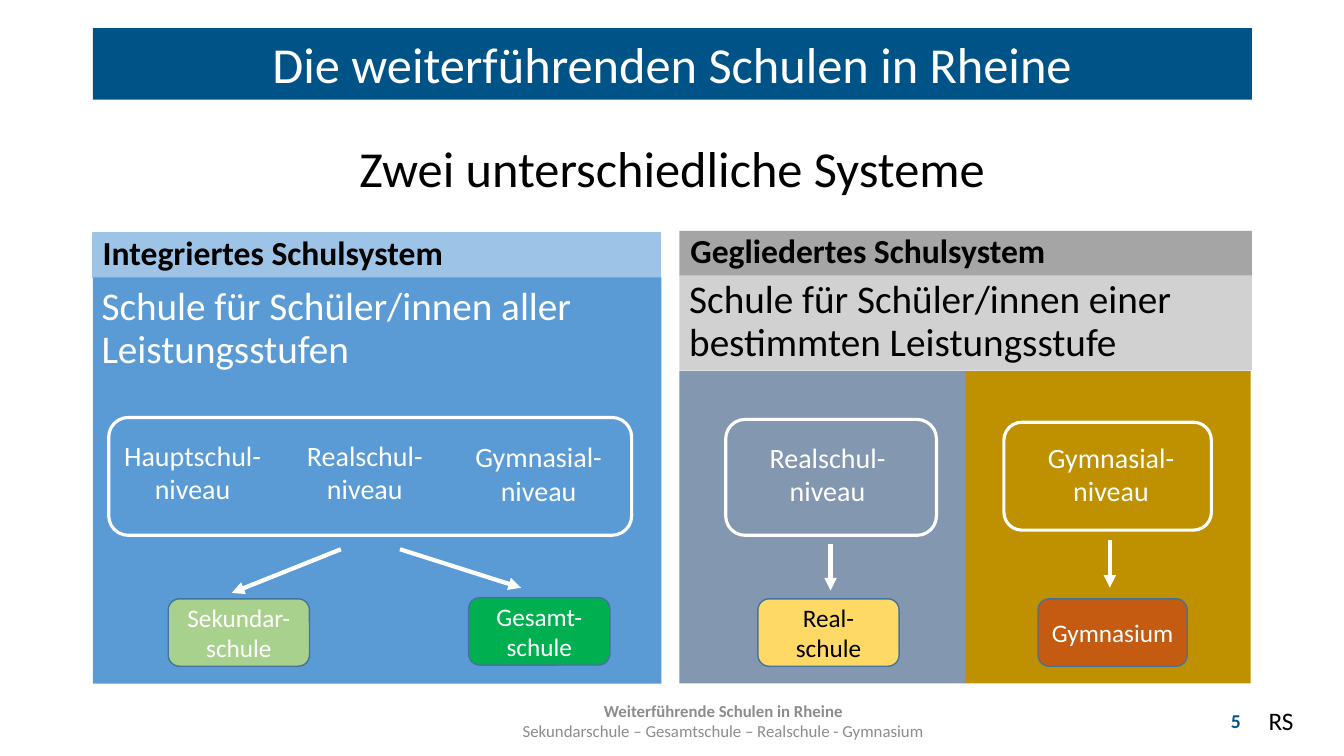
"""Build a slide comparing the two secondary school systems in Rheine."""
from dataclasses import dataclass

from lxml import etree
from pptx import Presentation
from pptx.dml.color import RGBColor
from pptx.enum.shapes import MSO_CONNECTOR, MSO_SHAPE
from pptx.enum.text import MSO_ANCHOR, MSO_AUTO_SIZE, PP_ALIGN
from pptx.oxml.ns import qn
from pptx.util import Cm, Pt

RECTANGLE = MSO_SHAPE.RECTANGLE
ROUNDED = MSO_SHAPE.ROUNDED_RECTANGLE
STRAIGHT = MSO_CONNECTOR.STRAIGHT
TOP, MIDDLE, BOTTOM = MSO_ANCHOR.TOP, MSO_ANCHOR.MIDDLE, MSO_ANCHOR.BOTTOM
LEFT, CENTER, RIGHT = PP_ALIGN.LEFT, PP_ALIGN.CENTER, PP_ALIGN.RIGHT
FIT_SHAPE = MSO_AUTO_SIZE.SHAPE_TO_FIT_TEXT

FONT = "Calibri"
COLORS = {
    "white": "FFFFFF",
    "black": "000000",
    "navy": "005386",
    "blue": "5B9BD5",
    "light blue": "9DC3E6",
    "outline": "43739E",
    "gray": "A5A5A5",
    "footer gray": "8C8C8C",
    "slate": "8497B0",
    "ochre": "BF9000",
    "light green": "A9D18E",
    "green": "00B050",
    "yellow": "FFD966",
    "rust": "C55A11",
}


@dataclass(frozen=True)
class Area:
    """Position and size in centimetres."""
    left: float
    top: float
    width: float
    height: float

    def lengths(self) -> tuple:
        """Return the four values as lengths."""
        return Cm(self.left), Cm(self.top), Cm(self.width), Cm(self.height)


@dataclass(frozen=True)
class Panel:
    """A coloured background field."""
    area: Area
    fill: str
    alpha: int = 100
    line: str | None = None


@dataclass(frozen=True)
class School:
    """A school type in a rounded box."""
    text: str
    area: Area
    fill: str
    color: str = "white"


@dataclass(frozen=True)
class Level:
    """A performance level."""
    text: str
    area: Area


@dataclass(frozen=True)
class Arrow:
    """An arrow from a level frame to a school."""
    start: tuple[float, float]
    end: tuple[float, float]


PANELS = [
    Panel(Area(24.31, 9.35, 7.21, 7.87), "ochre"),
    Panel(Area(17.12, 9.35, 7.21, 7.87), "slate"),
    Panel(Area(17.12, 5.82, 14.43, 1.12), "gray"),
    Panel(Area(2.34, 5.87, 14.3, 1.12), "light blue", line="light blue"),
    Panel(Area(2.34, 6.99, 14.33, 10.24), "blue"),
    Panel(Area(17.12, 6.93, 14.43, 2.41), "gray", alpha=50),
    Panel(Area(2.34, 0.71, 29.21, 1.8), "navy"),
]
HEADINGS = [
    Level("Integriertes Schulsystem", Area(2.34, 4.72, 14.33, 2.29)),
    Level("Gegliedertes Schulsystem", Area(17.15, 4.67, 14.4, 2.29)),
]
SCHOOLS = [
    School("Sekundar-schule", Area(4.24, 15.09, 3.56, 1.7), "light green"),
    School("Gesamt-schule", Area(11.81, 15.06, 3.56, 1.7), "green"),
    School("Real-schule", Area(19.1, 15.09, 3.56, 1.7), "yellow", "black"),
    School("Gymnasium", Area(26.16, 15.09, 3.76, 1.7), "rust"),
]
LEVELS = [
    Level("Hauptschul-niveau", Area(2.72, 10.92, 4.27, 1.96)),
    Level("Realschul-\nniveau", Area(7.06, 10.92, 4.27, 1.96)),
    Level("Gymnasial-niveau", Area(11.05, 10.95, 5.05, 1.96)),
    Level("Realschul-\nniveau", Area(18.72, 10.97, 4.27, 1.96)),
    Level("Gymnasial-niveau", Area(25.5, 10.97, 5.0, 1.96)),
]
FRAMES = [
    Area(2.74, 10.52, 13.18, 2.97),
    Area(18.29, 10.57, 5.31, 2.92),
    Area(25.3, 10.64, 5.23, 2.72),
]
ARROWS = [
    Arrow((8.59, 13.84), (5.84, 14.94)),
    Arrow((10.08, 13.84), (13.13, 14.81)),
    Arrow((20.93, 13.72), (20.93, 14.88)),
    Arrow((27.97, 13.61), (27.97, 14.81)),
]


def rgb(name: str) -> RGBColor:
    """Look up a named colour."""
    return RGBColor.from_string(COLORS[name])


def write(box, text: str, *, size: float, color: str = "white", bold_lines: int = 0,
          align=LEFT, anchor=TOP, spacing: float = 1.0, before: float = 0,
          wrap: bool = True, fit: bool = False) -> None:
    """Write one formatted paragraph, with the first lines bold on request."""
    frame = box.text_frame
    frame.word_wrap = wrap
    frame.vertical_anchor = anchor
    if fit:
        frame.auto_size = FIT_SHAPE
    para = frame.paragraphs[0]
    para.alignment = align
    para.line_spacing = spacing
    para.space_before = Pt(before)
    for index, line in enumerate(text.split("\n")):
        if index:
            para.add_line_break()
        span = para.add_run()
        span.text = line
        span.font.name = FONT
        span.font.size = Pt(size)
        span.font.bold = index < bold_lines
        span.font.color.rgb = rgb(color)


def add_box(page, kind, area: Area, *, fill: str | None = None, alpha: int = 100,
            line: str | None = None, weight: float = 1):
    """Add a preset shape with the given fill and outline."""
    box = page.shapes.add_shape(kind, *area.lengths())
    box.shadow.inherit = False
    if fill:
        box.fill.solid()
        box.fill.fore_color.rgb = rgb(fill)
    else:
        box.fill.background()
    if alpha < 100:
        tint = box.fill._xPr.find(qn("a:solidFill"))[0]
        etree.SubElement(tint, qn("a:alpha")).set("val", str(alpha * 1000))
    if line:
        box.line.color.rgb = rgb(line)
        box.line.width = Pt(weight)
    else:
        box.line.fill.background()
    return box


def add_text(page, text: str, area: Area, **style) -> None:
    """Add a text box."""
    write(page.shapes.add_textbox(*area.lengths()), text, **style)


def add_arrow(page, arrow: Arrow) -> None:
    """Add a white arrow."""
    points = [Cm(value) for value in arrow.start + arrow.end]
    connector = page.shapes.add_connector(STRAIGHT, *points)
    connector.line.color.rgb = rgb("white")
    connector.line.width = Pt(3)
    etree.SubElement(connector.line._get_or_add_ln(), qn("a:tailEnd")).set("type", "triangle")
    etree.SubElement(connector._element.spPr, qn("a:effectLst"))


def main() -> None:
    """Build and save the deck."""
    deck = Presentation()
    deck.slide_width, deck.slide_height = Cm(33.87), Cm(19.05)
    page = deck.slides.add_slide(deck.slide_layouts[6])

    *_, group_panel, title_panel = [
        add_box(page, RECTANGLE, panel.area, fill=panel.fill, alpha=panel.alpha, line=panel.line)
        for panel in PANELS
    ]
    write(title_panel, "Die weiterführenden Schulen in Rheine", size=36,
          align=CENTER, anchor=BOTTOM, spacing=0.9)
    add_text(page, "Zwei unterschiedliche Systeme", Area(8.81, 3.33, 16.41, 1.8),
             size=36, color="black", wrap=False, fit=True)
    for heading in HEADINGS:
        add_text(page, heading.text, heading.area, size=24, color="black", bold_lines=1,
                 anchor=BOTTOM, spacing=0.9, before=10)
    add_text(page, "Schule für Schüler/innen aller Leistungsstufen",
             Area(2.31, 7.11, 14.33, 2.41), size=28, spacing=0.9, before=10)
    write(group_panel, "Schule für Schüler/innen einer bestimmten Leistungsstufe",
          size=28, color="black", spacing=0.9, before=10)

    for school in SCHOOLS:
        box = add_box(page, ROUNDED, school.area, fill=school.fill, line="outline")
        write(box, school.text, size=18, color=school.color, align=CENTER, anchor=MIDDLE)
    for level in LEVELS:
        add_text(page, level.text, level.area, size=20, align=CENTER, fit=True)
    for area in FRAMES:
        add_box(page, ROUNDED, area, line="white", weight=2.25)
    for arrow in ARROWS:
        add_arrow(page, arrow)

    add_text(page, "Weiterführende Schulen in Rheine\n"
             "Sekundarschule – Gesamtschule – Realschule - Gymnasium",
             Area(11.23, 17.65, 14, 1.02), size=12, color="footer gray", bold_lines=1,
             align=CENTER, anchor=MIDDLE)
    add_text(page, "5", Area(30.35, 17.65, 1.17, 1.02), size=14, color="navy",
             bold_lines=1, align=RIGHT, anchor=MIDDLE)
    add_text(page, "RS", Area(31.72, 17.65, 2.13, 1.02), size=18, color="black", fit=True)
    deck.save("out.pptx")


if __name__ == "__main__":
    main()
